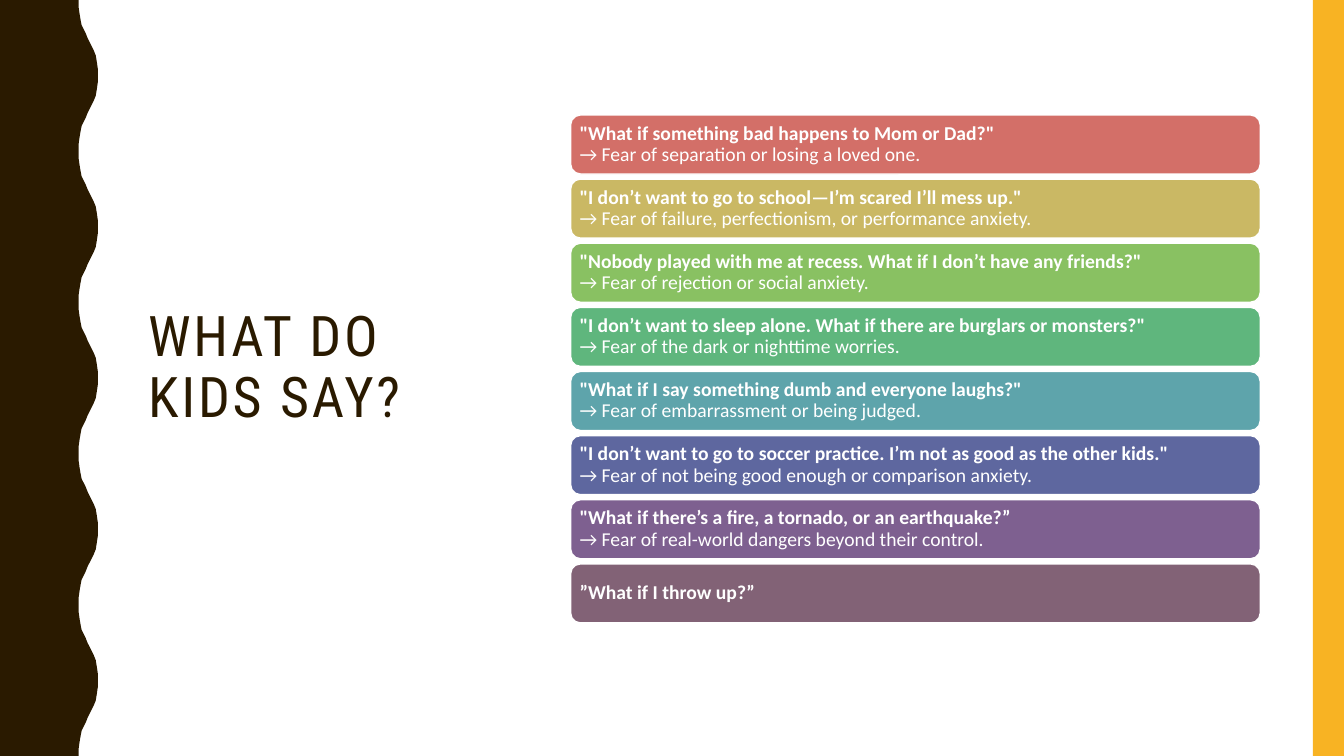
from dataclasses import dataclass

from lxml.etree import SubElement
from pptx import Presentation
from pptx.dml.color import RGBColor
from pptx.enum.shapes import MSO_SHAPE as Preset
from pptx.enum.text import MSO_ANCHOR as Anchor, PP_ALIGN as Align
from pptx.oxml.ns import qn
from pptx.util import Inches, Pt


@dataclass(frozen=True)
class Theme:
    dark: str = "2A1A00"
    accent: str = "F8B323"
    light: str = "FFFFFF"
    cards: tuple = ("D36F68", "CAB864", "89C162", "5FB67D",
                    "5EA4AB", "5E679F", "7E6090", "826276")
    title_font: str = "Roboto Condensed"
    body_font: str = "Calibri"
    title_size: int = 40
    body_size: int = 14
    line_spacing: float = 0.9


THEME = Theme()
WIDTH, HEIGHT = 13.33, 7.5

WORRIES = [
    ('"What if something bad happens to Mom or Dad?"',
     "→ Fear of separation or losing a loved one."),
    ('"I don’t want to go to school—I’m scared I’ll mess up."',
     "→ Fear of failure, perfectionism, or performance anxiety."),
    ('"Nobody played with me at recess. What if I don’t have any friends?"',
     "→ Fear of rejection or social anxiety."),
    ('"I don’t want to sleep alone. What if there are burglars or monsters?"',
     "→ Fear of the dark or nighttime worries."),
    ('"What if I say something dumb and everyone laughs?"',
     "→ Fear of embarrassment or being judged."),
    ('"I don’t want to go to soccer practice. I’m not as good as the other kids."',
     "→ Fear of not being good enough or comparison anxiety."),
    ('"What if there’s a fire, a tornado, or an earthquake?”',
     "→ Fear of real-world dangers beyond their control."),
    ("”What if I throw up?”",),
]

# Trough to crest of one wave, as (x, y) in inches; the other half mirrors it.
WAVE_PERIOD = 1.5
HALF_WAVE = [(0.78, 0), (0.78, 0.07), (0.79, 0.14), (0.8, 0.2), (0.81, 0.25),
             (0.83, 0.29), (0.85, 0.33), (0.87, 0.38), (0.89, 0.42), (0.91, 0.46),
             (0.93, 0.5), (0.95, 0.55), (0.96, 0.61), (0.97, 0.68), (0.97, 0.75)]


def paint(shape, fill, line=None):
    shape.shadow.inherit = False
    shape.fill.solid()
    shape.fill.fore_color.rgb = RGBColor.from_string(fill)
    if line:
        shape.line.color.rgb = RGBColor.from_string(line)
        shape.line.width = Pt(1)
    else:
        shape.line.fill.background()


def write(shape, lines, *, font, size, color, bold_first=False, spacing=0,
          inset_x=0.1, inset_y=0.05):
    """Fill the shape with one left-aligned paragraph, broken between lines."""
    frame = shape.text_frame
    frame.word_wrap = True
    frame.vertical_anchor = Anchor.MIDDLE
    frame.margin_left = frame.margin_right = Inches(inset_x)
    frame.margin_top = frame.margin_bottom = Inches(inset_y)
    paragraph = frame.paragraphs[0]
    paragraph.alignment = Align.LEFT
    paragraph.line_spacing = THEME.line_spacing
    for index, line in enumerate(lines):
        if index:
            paragraph.add_line_break()
        run = paragraph.add_run()
        run.text = line
        run.font.name = font
        run.font.size = Pt(size)
        run.font.bold = bold_first and index == 0
        run.font.color.rgb = RGBColor.from_string(color)
        if spacing:
            run.font._element.set("spc", str(spacing * 100))
    for line_break in paragraph._p.findall(qn("a:br")):
        SubElement(line_break, qn("a:rPr"), sz=str(size * 100))


def add_wavy_edge(slide, left, top, height):
    crest_to_trough = [(x, WAVE_PERIOD - y) for x, y in reversed(HALF_WAVE[:-1])]
    wave = HALF_WAVE + crest_to_trough
    points = [(left + x, top + number * WAVE_PERIOD + y)
              for number in range(round(height / WAVE_PERIOD)) for x, y in wave]
    points.append((left, top + height))
    builder = slide.shapes.build_freeform(Inches(left), Inches(top), scale=1.0)
    builder.add_line_segments([(Inches(x), Inches(y)) for x, y in points], close=True)
    paint(builder.convert_to_shape(), THEME.dark)


def add_side_bar(slide, left, top, width, height):
    bar = slide.shapes.add_shape(Preset.RECTANGLE, Inches(left), Inches(top),
                                 Inches(width), Inches(height))
    paint(bar, THEME.accent)


def add_title(slide, left, top, width, height):
    title = slide.shapes.add_textbox(Inches(left), Inches(top),
                                     Inches(width), Inches(height))
    write(title, ["WHAT DO KIDS SAY?"], font=THEME.title_font,
          size=THEME.title_size, color=THEME.dark, spacing=2)


def add_worry_cards(slide, left, top, width, height, gap=0.05):
    """Stack one card per worry, evenly over the height of the box."""
    pitch = (height + gap) / len(WORRIES)
    for index, (lines, fill) in enumerate(zip(WORRIES, THEME.cards)):
        card = slide.shapes.add_shape(
            Preset.ROUNDED_RECTANGLE, Inches(left), Inches(top + index * pitch),
            Inches(width), Inches(pitch - gap))
        paint(card, fill, THEME.light)
        write(card, lines, font=THEME.body_font, size=THEME.body_size,
              color=THEME.light, bold_first=True, inset_x=0.06, inset_y=0.06)


def main():
    presentation = Presentation()
    presentation.slide_width = Inches(WIDTH)
    presentation.slide_height = Inches(HEIGHT)
    slide = presentation.slides.add_slide(presentation.slide_layouts[6])
    add_wavy_edge(slide, 0, 0, HEIGHT)
    add_side_bar(slide, 13.02, 0, 0.31, HEIGHT)
    add_title(slide, 1.37, 0.7, 3.7, 5.92)
    add_worry_cards(slide, 5.66, 1.14, 6.84, 5.04)
    presentation.save("out.pptx")


if __name__ == "__main__":
    main()
